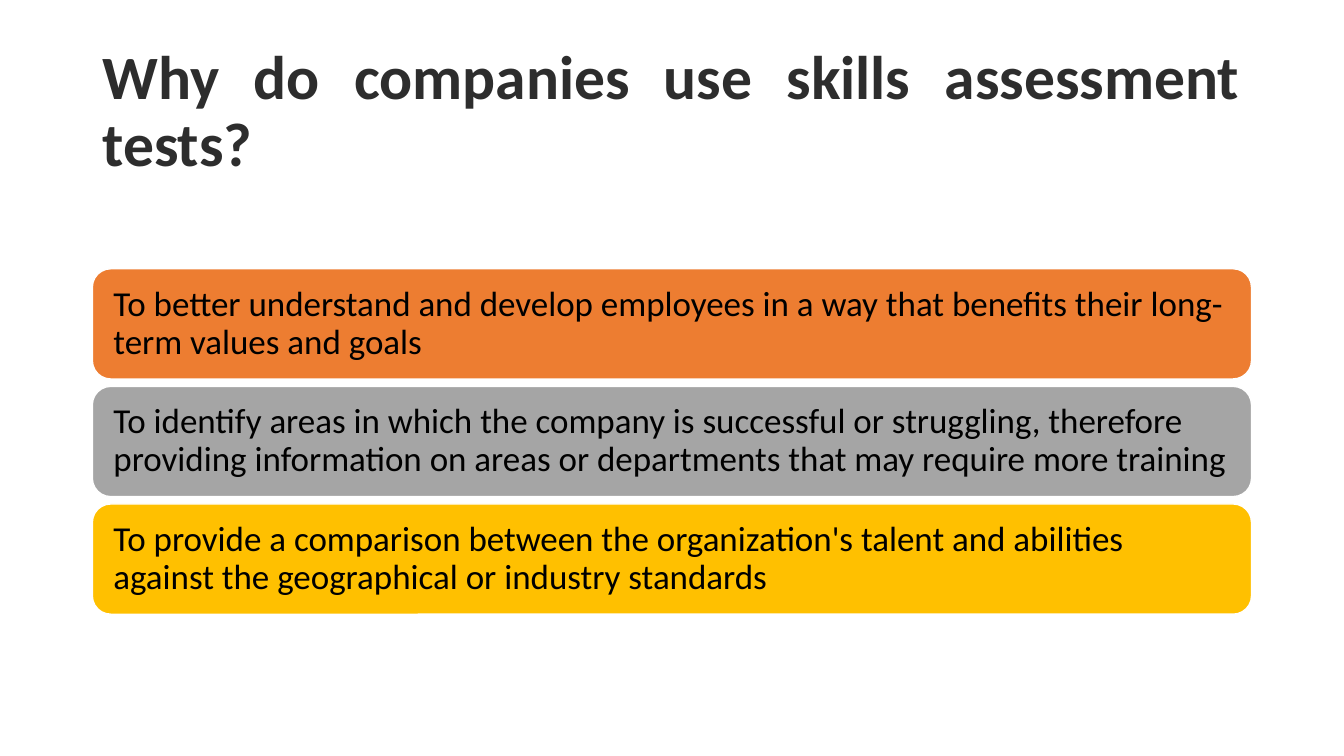
from pptx import Presentation
from pptx.dml.color import RGBColor
from pptx.enum.shapes import MSO_SHAPE
from pptx.enum.text import MSO_ANCHOR, MSO_AUTO_SIZE, PP_ALIGN
from pptx.util import Pt

ROUND = MSO_SHAPE.ROUNDED_RECTANGLE
MIDDLE = MSO_ANCHOR.MIDDLE
LEFT, JUSTIFY = PP_ALIGN.LEFT, PP_ALIGN.JUSTIFY

TITLE = "Why do companies use skills assessment tests?"
REASONS = [
    ("orange", "To better understand and develop employees in a way that "
               "benefits their long-term values and goals"),
    ("gray", "To identify areas in which the company is successful or "
             "struggling, therefore providing information on areas or "
             "departments that may require more training"),
    ("gold", "To provide a comparison between the organization's talent and "
             "abilities against the geographical or industry standards"),
]
COLORS = {"ink": "2D2D2D", "black": "000000", "white": "FFFFFF",
          "orange": "ED7D31", "gray": "A5A5A5", "gold": "FFC000"}
FONT = "Calibri"

PX = 9525  # EMU per px, 96 px to the inch
SLIDE_W, SLIDE_H = 1280, 720
EDGE = 88
WIDTH = SLIDE_W - 2 * EDGE
TITLE_TOP, TITLE_H = 38, 139
BAR_TOP, BAR_H, BAR_GAP = 256, 105, 7
BAR_PAD = 15


def color(name):
    return RGBColor.from_string(COLORS[name])


def place(shape, top, height):
    """Set a shape between the side margins."""
    shape.left, shape.top = EDGE * PX, top * PX
    shape.width, shape.height = WIDTH * PX, height * PX


def write(shape, text, size, ink, align, bold=False):
    frame = shape.text_frame
    frame.word_wrap = True
    frame.auto_size = MSO_AUTO_SIZE.NONE
    frame.vertical_anchor = MIDDLE
    para = frame.paragraphs[0]
    para.alignment = align
    para.line_spacing = 0.9
    run = para.add_run()
    run.text = text
    run.font.name = FONT
    run.font.size = Pt(size)
    run.font.bold = bold
    run.font.color.rgb = color(ink)


def add_bar(slide, top, fill, text):
    bar = slide.shapes.add_shape(
        ROUND, EDGE * PX, top * PX, WIDTH * PX, BAR_H * PX)
    bar.shadow.inherit = False
    bar.fill.solid()
    bar.fill.fore_color.rgb = color(fill)
    bar.line.color.rgb = color("white")
    bar.line.width = Pt(1)
    frame = bar.text_frame
    frame.margin_left = frame.margin_right = BAR_PAD * PX
    frame.margin_top = frame.margin_bottom = BAR_PAD * PX
    write(bar, text, 25, "black", LEFT)


def main():
    deck = Presentation()
    deck.slide_width, deck.slide_height = SLIDE_W * PX, SLIDE_H * PX
    slide = deck.slides.add_slide(deck.slide_layouts[5])
    title = slide.shapes.title
    place(title, TITLE_TOP, TITLE_H)
    write(title, TITLE, 44, "ink", JUSTIFY, bold=True)
    for i, (fill, text) in enumerate(REASONS):
        add_bar(slide, BAR_TOP + i * (BAR_H + BAR_GAP), fill, text)
    deck.save("out.pptx")


if __name__ == "__main__":
    main()
